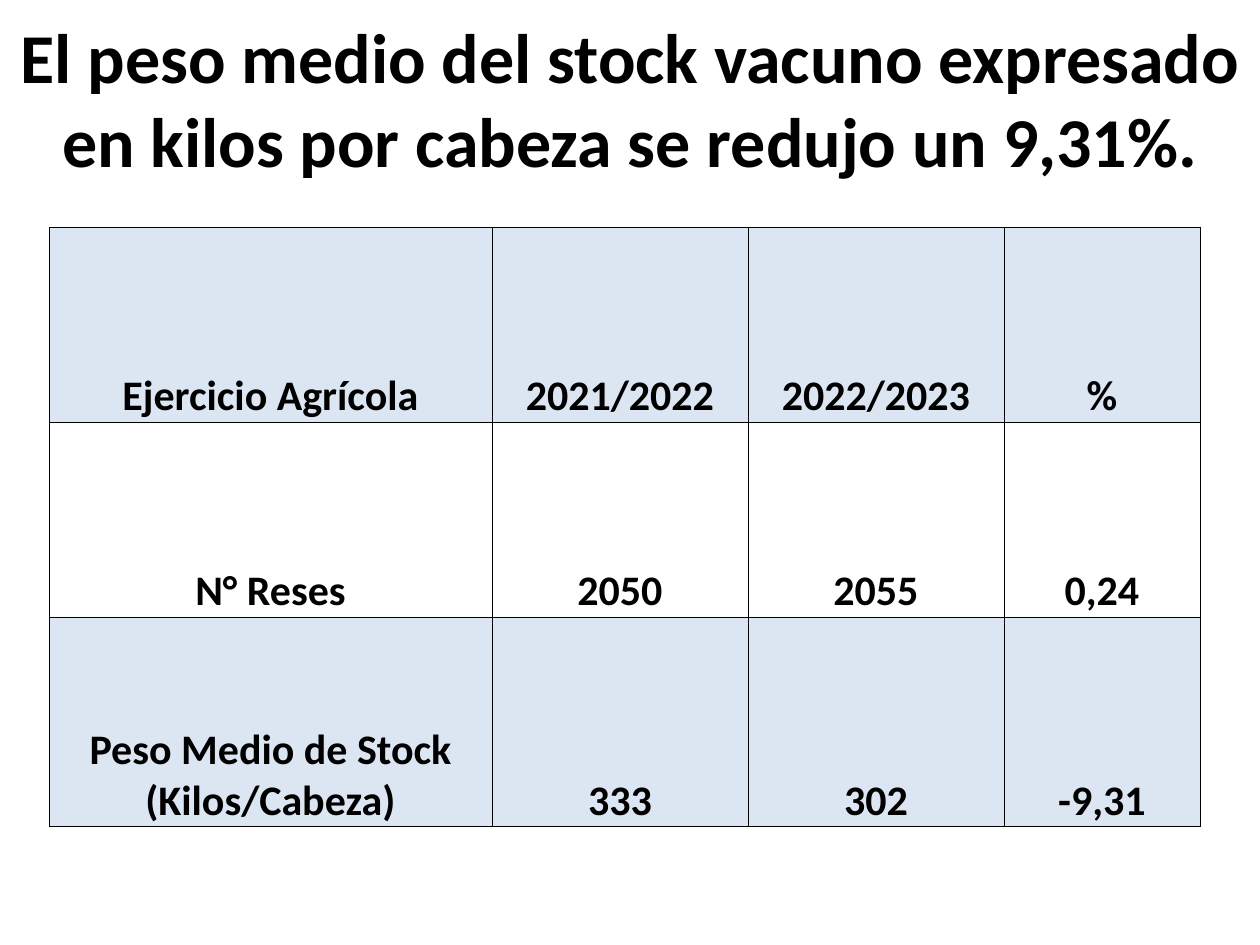
"""Build a slide with a table on the average weight of a cattle stock."""
from dataclasses import dataclass

from lxml import etree
from pptx import Presentation
from pptx.dml.color import RGBColor
from pptx.enum.text import MSO_ANCHOR, MSO_AUTO_SIZE, PP_ALIGN
from pptx.oxml.ns import qn
from pptx.util import Emu, Pt

CENTER = PP_ALIGN.CENTER
MIDDLE = MSO_ANCHOR.MIDDLE
BOTTOM = MSO_ANCHOR.BOTTOM
NO_AUTOFIT = MSO_AUTO_SIZE.NONE

PX_PER_INCH = 126
FONT = "Calibri"
BLACK = RGBColor(0x00, 0x00, 0x00)
WHITE = RGBColor(0xFF, 0xFF, 0xFF)
PALE_BLUE = RGBColor(0xDC, 0xE6, 0xF2)
BORDER_WIDTH = Pt(0.5)

TITLE = "El peso medio del stock vacuno expresado en kilos por cabeza se redujo un 9,31%."
COLUMN_WIDTHS = (443, 256, 256, 196)


@dataclass(frozen=True)
class Row:
    height: int
    fill: RGBColor
    texts: tuple[str, ...]


ROWS = (
    Row(195, PALE_BLUE, ("Ejercicio Agrícola", "2021/2022", "2022/2023", "%")),
    Row(195, WHITE, ("N° Reses", "2050", "2055", "0,24")),
    Row(210, PALE_BLUE, ("Peso Medio de Stock (Kilos/Cabeza)", "333", "302", "-9,31")),
)


def px(n: int) -> Emu:
    return Emu(round(n * 914400 / PX_PER_INCH))


def write(tf, text: str, size: int) -> None:
    p = tf.paragraphs[0]
    p.alignment = CENTER
    r = p.add_run()
    r.text = text
    r.font.name = FONT
    r.font.size = Pt(size)
    r.font.bold = True
    r.font.color.rgb = BLACK


def add_borders(cell) -> None:
    tc_pr = cell._tc.get_or_add_tcPr()
    for i, side in enumerate(("lnL", "lnR", "lnT", "lnB")):
        ln = etree.Element(qn(f"a:{side}"), w=str(BORDER_WIDTH))
        fill = etree.SubElement(ln, qn("a:solidFill"))
        etree.SubElement(fill, qn("a:srgbClr"), val=str(BLACK))
        tc_pr.insert(i, ln)


def fill_cell(cell, text: str, fill: RGBColor) -> None:
    cell.fill.solid()
    cell.fill.fore_color.rgb = fill
    cell.vertical_anchor = BOTTOM
    cell.margin_left = cell.margin_right = cell.margin_top = px(1)
    cell.margin_bottom = 0
    add_borders(cell)
    write(cell.text_frame, text, 24)


def add_title(s) -> None:
    sp = s.shapes.title
    sp.left, sp.top, sp.width, sp.height = px(0), px(0), px(1260), px(195)
    tf = sp.text_frame
    tf.word_wrap = True
    tf.auto_size = NO_AUTOFIT
    tf.vertical_anchor = MIDDLE
    write(tf, TITLE, 40)


def add_stock_table(s) -> None:
    width = sum(COLUMN_WIDTHS)
    height = sum(row.height for row in ROWS)
    table = s.shapes.add_table(
        len(ROWS), len(COLUMN_WIDTHS), px(49), px(227), px(width), px(height)
    ).table
    for column, column_width in zip(table.columns, COLUMN_WIDTHS):
        column.width = px(column_width)
    for table_row, row in zip(table.rows, ROWS):
        table_row.height = px(row.height)
        for cell, text in zip(table_row.cells, row.texts):
            fill_cell(cell, text, row.fill)


def main() -> None:
    prs = Presentation()
    prs.slide_width, prs.slide_height = px(1260), px(945)
    s = prs.slides.add_slide(prs.slide_layouts[5])
    add_title(s)
    add_stock_table(s)
    prs.save("out.pptx")


if __name__ == "__main__":
    main()
